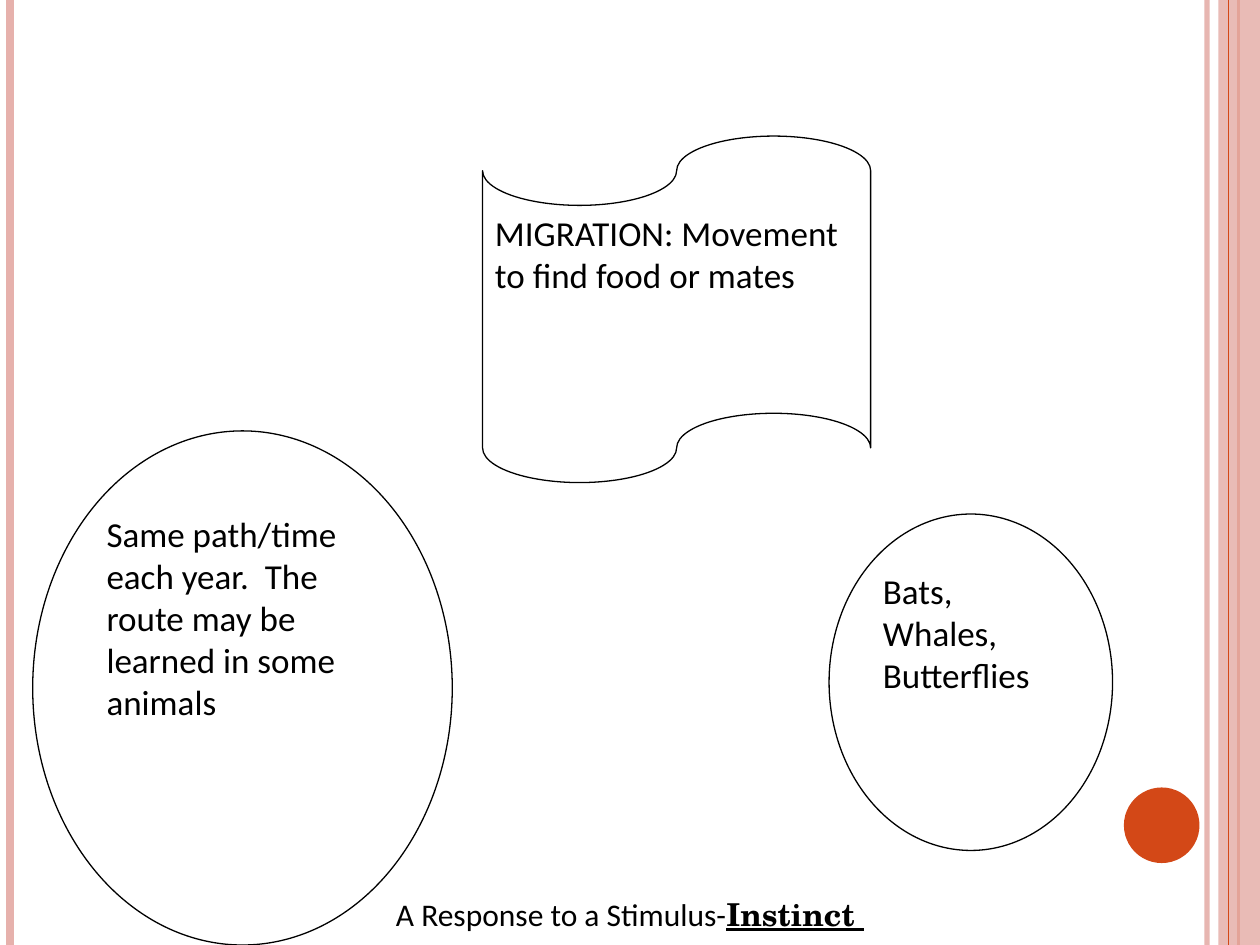
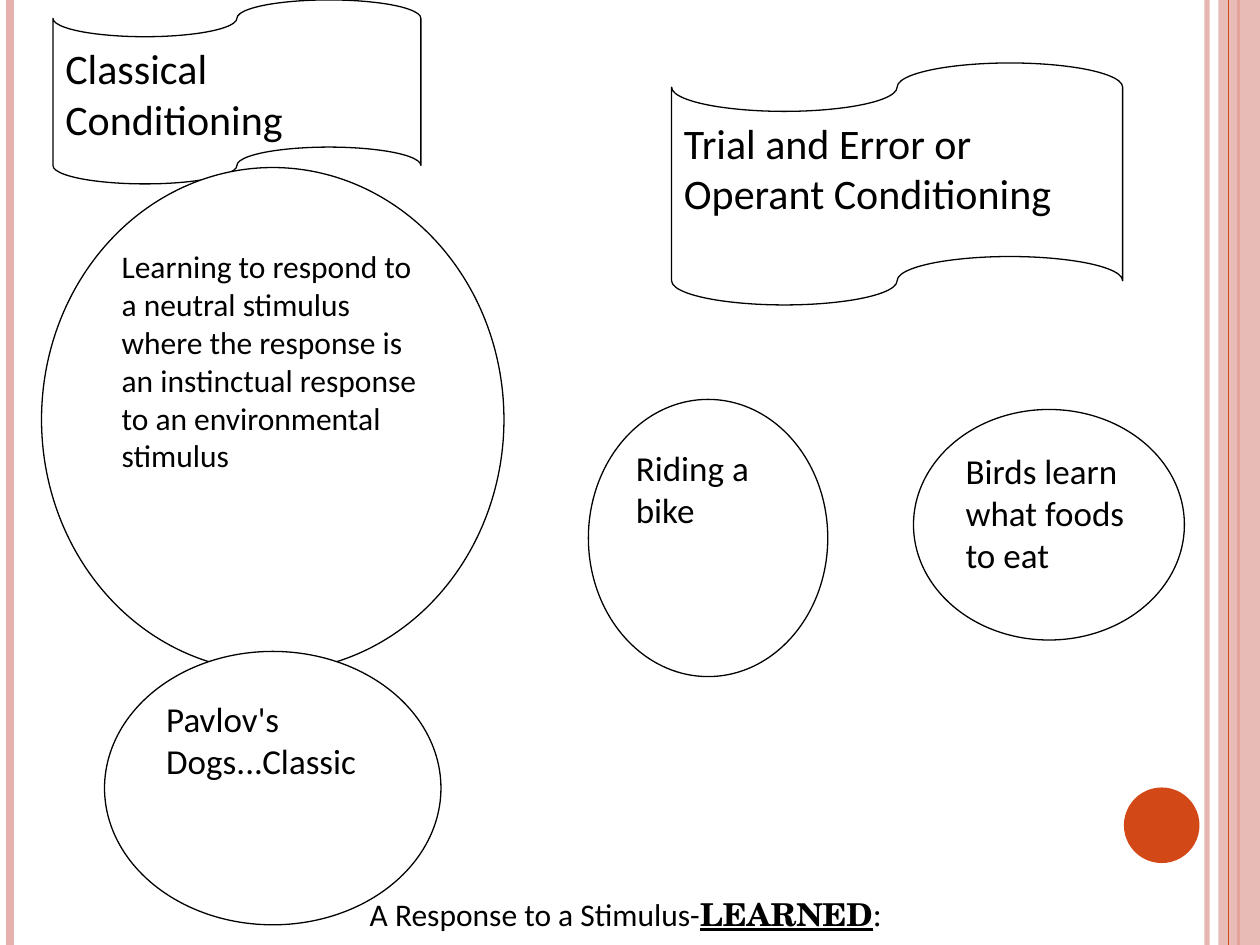
from dataclasses import dataclass

from lxml import etree
from pptx import Presentation
from pptx.dml.color import RGBColor
from pptx.enum.shapes import MSO_CONNECTOR, MSO_SHAPE
from pptx.enum.text import MSO_ANCHOR, MSO_AUTO_SIZE, PP_ALIGN
from pptx.oxml.ns import qn
from pptx.util import Inches, Pt

LINE = MSO_CONNECTOR.STRAIGHT
RECT = MSO_SHAPE.RECTANGLE
OVAL = MSO_SHAPE.OVAL
TAPE = MSO_SHAPE.FLOWCHART_PUNCHED_TAPE
TOP, MIDDLE = MSO_ANCHOR.TOP, MSO_ANCHOR.MIDDLE
LEFT, CENTER = PP_ALIGN.LEFT, PP_ALIGN.CENTER
WIDTH, HEIGHT = 10, 7.5


@dataclass(frozen=True)
class Theme:
    ink: RGBColor = RGBColor(0, 0, 0)
    paper: RGBColor = RGBColor(255, 255, 255)
    pink: RGBColor = RGBColor(0xE6, 0xB1, 0xAC)
    rust: RGBColor = RGBColor(0xD3, 0x48, 0x17)
    body: str = "Calibri"
    accent: str = "TeX Gyre Schola"
    small: int = 18
    text: int = 20
    head: int = 24
    rule: float = 0.75
    after: int = 10


def fade(fill, percent):
    """Set the opacity of a solid colour, given the element that holds it."""
    color = fill.find(".//" + qn("a:srgbClr"))
    etree.SubElement(color, qn("a:alpha"), val=str(percent * 1000))


class Deck:
    def __init__(self, theme):
        self.theme = theme
        self.prs = Presentation()
        self.prs.slide_width = Inches(WIDTH)
        self.prs.slide_height = Inches(HEIGHT)
        self.slide = None

    def page(self):
        """Start a slide with its side rules, band and dot."""
        t = self.theme
        self.slide = self.prs.slides.add_slide(self.prs.slide_layouts[6])
        fill = self.slide.background.fill
        fill.solid()
        fill.fore_color.rgb = t.paper
        self.rule(9.58, t.pink, 3, 93)
        self.rule(0.08, t.pink, 4.5)
        self.rule(9.83, t.rust, 1.5)
        band = self.shape(RECT, (9.67, 0, 0.33, HEIGHT), t.pink)
        fade(band.fill._xPr.find(qn("a:solidFill")), 87)
        self.rule(9.75, t.rust, t.rule)
        self.shape(OVAL, (8.92, 6.25, 0.6, 0.6), t.rust)

    def rule(self, x, color, width, alpha=None):
        """Draw a vertical line over the full height."""
        line = self.slide.shapes.add_connector(
            LINE, Inches(x), 0, Inches(x), Inches(HEIGHT))
        line.line.color.rgb = color
        line.line.width = Pt(width)
        if alpha:
            fade(line.line._ln, alpha)
        etree.SubElement(line._element.spPr, qn("a:effectLst"))

    def shape(self, kind, box, color):
        item = self.slide.shapes.add_shape(kind, *map(Inches, box))
        item.shadow.inherit = False
        item.fill.solid()
        item.fill.fore_color.rgb = color
        item.line.fill.background()
        return item

    def note(self, kind, box, text, size=None):
        """Add an outlined shape that holds one paragraph."""
        t = self.theme
        item = self.shape(kind, box, t.paper)
        item.line.color.rgb = t.ink
        item.line.width = Pt(t.rule)
        frame = item.text_frame
        frame.word_wrap = True
        frame.vertical_anchor = TOP
        para = frame.paragraphs[0]
        para.text = text
        para.alignment = LEFT
        para.space_after = Pt(t.after)
        self.style(para.font, size or t.text)

    def style(self, font, size):
        font.name = self.theme.body
        font.size = Pt(size)
        font.color.rgb = self.theme.ink

    def foot(self, width, word, tail=""):
        """Add the centred line at the bottom, with its key word marked."""
        t = self.theme
        box = self.slide.shapes.add_textbox(
            Inches((WIDTH - width) / 2), Inches(7.05), Inches(width), Inches(0.4))
        frame = box.text_frame
        frame.word_wrap = False
        frame.auto_size = MSO_AUTO_SIZE.SHAPE_TO_FIT_TEXT
        frame.vertical_anchor = MIDDLE
        para = frame.paragraphs[0]
        para.alignment = CENTER
        self.style(para.font, t.small)
        para.add_run().text = "A Response to a Stimulus-"
        key = para.add_run()
        key.text = word
        key.font.name = t.accent
        key.font.bold = key.font.underline = True
        if tail:
            end = para.add_run()
            end.text = tail
            end.font.name = t.accent


def instinct(deck):
    deck.page()
    deck.foot(3.96, "Instinct ")
    deck.note(TAPE, (3.83, 1.08, 3.08, 2.75),
              "MIGRATION: Movement to find food or mates")
    deck.note(OVAL, (0.26, 3.42, 3.33, 4.08),
              "Same path/time each year.  The route may be learned in some animals")
    deck.note(OVAL, (6.58, 4.08, 2.25, 2.67), "Bats, Whales, Butterflies")


def learned(deck):
    t = deck.theme
    deck.page()
    deck.note(TAPE, (0.42, 0, 2.92, 1.46), "Classical Conditioning", t.head)
    deck.note(OVAL, (0.33, 1.33, 3.67, 4),
              "Learning to respond to a neutral stimulus where the response is "
              "an instinctual response to an environmental stimulus", t.small)
    deck.note(OVAL, (0.83, 5.17, 2.67, 2.17), "Pavlov's Dogs...Classic")
    deck.note(TAPE, (5.33, 0.5, 3.58, 1.92),
              "Trial and Error or Operant Conditioning", t.head)
    deck.note(OVAL, (4.67, 3.17, 1.9, 2.2), "Riding a bike")
    deck.note(OVAL, (7.25, 3.25, 2.15, 1.83), "Birds learn what foods to eat")
    deck.foot(4.38, "LEARNED", ": ")


def main():
    deck = Deck(Theme())
    instinct(deck)
    learned(deck)
    deck.prs.save("out.pptx")


if __name__ == "__main__":
    main()
